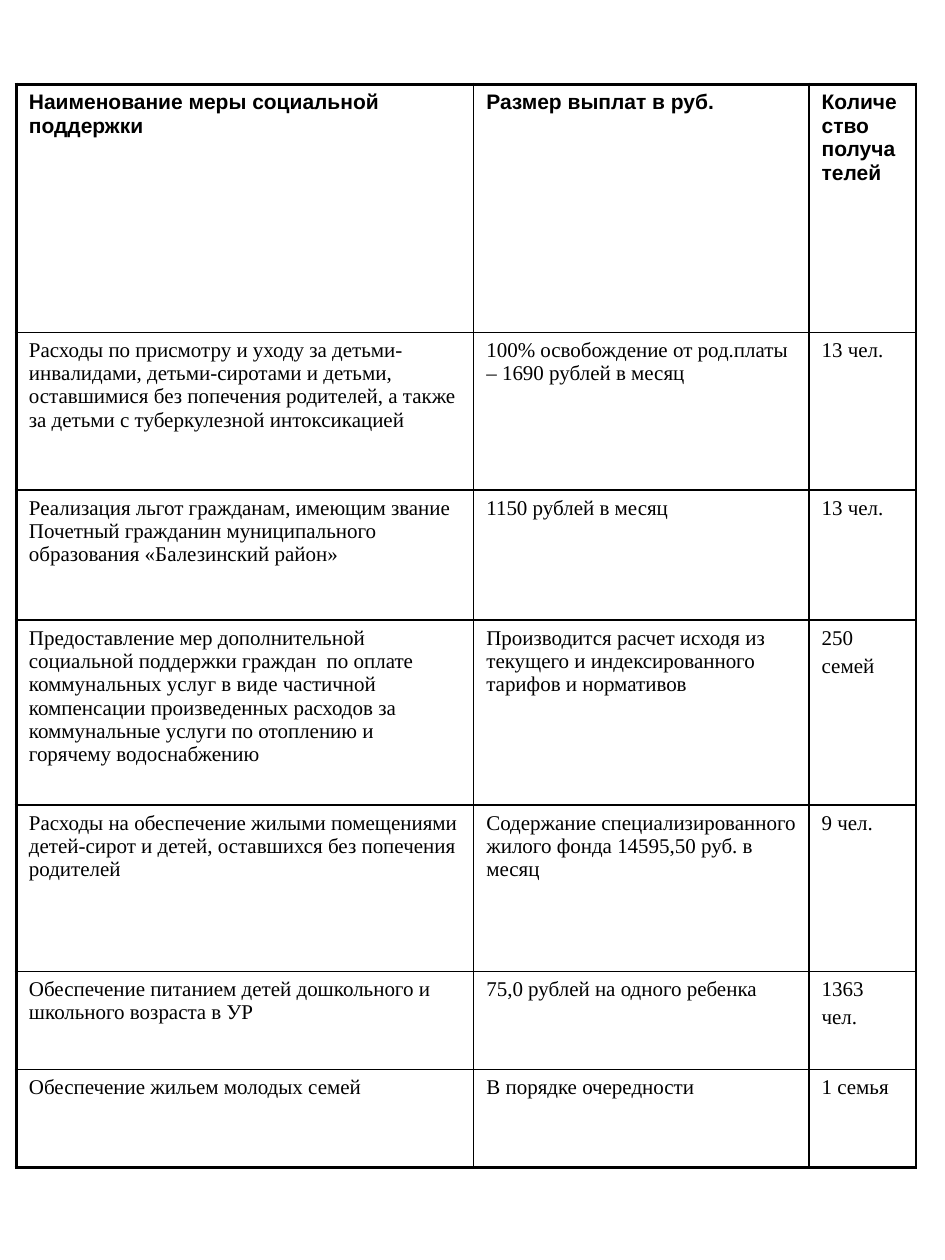
from dataclasses import dataclass

from lxml.etree import SubElement
from pptx import Presentation
from pptx.dml.color import RGBColor
from pptx.oxml.ns import qn
from pptx.table import _Cell
from pptx.util import Cm, Pt

BLACK = RGBColor(0x00, 0x00, 0x00)
HEADER_FONT = "Arial"
BODY_FONT = "Times New Roman"
THIN, THICK = Pt(1), Pt(2.25)

COLUMN_WIDTHS = (9.22, 6.76, 2.16)


@dataclass
class SupportMeasure:
    height: float
    name: str
    payment: str
    recipients: str  # each line is a paragraph


HEADER = SupportMeasure(
    5, "Наименование меры социальной поддержки", "Размер выплат в руб.", "Количество получателей")
MEASURES = [
    SupportMeasure(
        3.18,
        "Расходы по присмотру и уходу за детьми-инвалидами, детьми-сиротами и детьми, "
        "оставшимися без попечения родителей, а также за детьми с туберкулезной интоксикацией",
        "100% освобождение от род.платы – 1690 рублей в месяц",
        "13 чел."),
    SupportMeasure(
        2.62,
        "Реализация льгот гражданам, имеющим звание Почетный гражданин муниципального "
        "образования «Балезинский район»",
        "1150 рублей в месяц",
        "13 чел."),
    SupportMeasure(
        3.73,
        "Предоставление мер дополнительной социальной поддержки граждан  по оплате "
        "коммунальных услуг в виде частичной компенсации произведенных расходов за "
        "коммунальные услуги по отоплению и горячему водоснабжению",
        "Производится расчет исходя из текущего и индексированного тарифов и нормативов",
        "250\nсемей"),
    SupportMeasure(
        3.35,
        "Расходы на обеспечение жилыми помещениями детей-сирот и детей, оставшихся без "
        "попечения родителей",
        "Содержание специализированного жилого фонда 14595,50 руб. в месяц",
        "9 чел."),
    SupportMeasure(
        1.98,
        "Обеспечение питанием детей дошкольного и школьного возраста в УР",
        "75,0 рублей на одного ребенка",
        "1363\nчел."),
    SupportMeasure(
        1.98, "Обеспечение жильем молодых семей", "В порядке очередности", "1 семья"),
]


def write_text(cell: _Cell, text: str, font_name: str, bold: bool) -> None:
    frame = cell.text_frame
    for index, line in enumerate(text.split("\n")):
        paragraph = frame.add_paragraph() if index else frame.paragraphs[0]
        paragraph.space_before = Pt(2.7)
        run = paragraph.add_run()
        run.text = line
        run.font.name = font_name
        run.font.size = Pt(12)
        run.font.bold = bold
        run.font.color.rgb = BLACK


def draw_borders(cell: _Cell, left: int, right: int, top: int, bottom: int) -> None:
    properties = cell._tc.get_or_add_tcPr()
    for side, width in zip("LRTB", (left, right, top, bottom)):
        line = SubElement(properties, qn(f"a:ln{side}"), w=str(int(width)))
        fill = SubElement(line, qn("a:solidFill"))
        SubElement(fill, qn("a:srgbClr"), val=str(BLACK))


def main() -> None:
    presentation = Presentation()
    presentation.slide_width = Cm(19.05)
    presentation.slide_height = Cm(25.4)
    slide = presentation.slides.add_slide(presentation.slide_layouts[6])

    # Table grid
    measures = [HEADER, *MEASURES]
    table = slide.shapes.add_table(
        len(measures), len(COLUMN_WIDTHS), Cm(0.33), Cm(1.7),
        Cm(sum(COLUMN_WIDTHS)), Cm(sum(measure.height for measure in measures))).table
    table.first_row = False
    table.horz_banding = False
    for column, width in zip(table.columns, COLUMN_WIDTHS):
        column.width = Cm(width)

    # Rows: thick frame on the left, top and bottom
    last_row = len(measures) - 1
    for r, measure in enumerate(measures):
        table.rows[r].height = Cm(measure.height)
        is_header = r == 0
        for c, text in enumerate((measure.name, measure.payment, measure.recipients)):
            cell = table.cell(r, c)
            write_text(cell, text, HEADER_FONT if is_header else BODY_FONT, is_header)
            draw_borders(
                cell,
                left=THICK if c == 0 else THIN,
                right=THIN,
                top=THICK if is_header else THIN,
                bottom=THICK if r == last_row else THIN)
            cell.fill.background()

    presentation.save("out.pptx")


if __name__ == "__main__":
    main()
